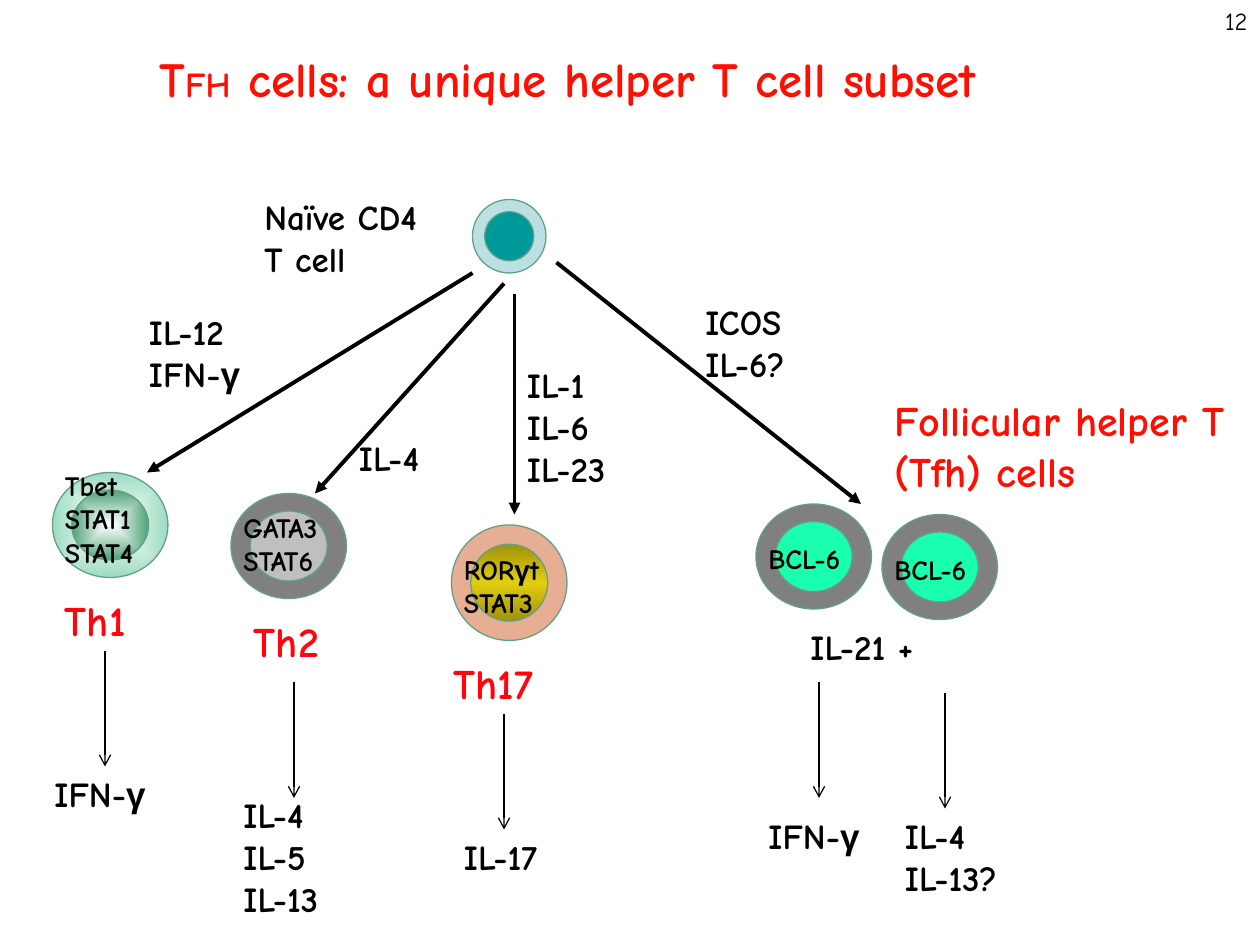
import pptx
import pptx.util
import pptx.dml.color
import pptx.enum.shapes
import pptx.enum.text
import pptx.oxml
import pptx.oxml.ns

Pt = pptx.util.Pt
FONT, GREEK = "Comic Neue", "Arial"
BLACK, RED, BRIGHT, EDGE = "000000", "FF0E02", "FF060F", "63A186"

TITLE = [("T", 28), ("FH", 20), (" cells: a unique helper T cell subset", 28)]

# A fill is a colour, or (stops, radial)
MINT = ([(0, "FFFFFF"), (100, "9CDCC1")], True)
GREEN = ([(0, "FFFFFF"), (100, "4DA376")], True)
GOLD = ([(0, "A1930B"), (50, "E1CD0F"), (100, "A1930B")], False)

# left, top, width, height, cell fill, nucleus fill
CELLS = [
    (30, 270, 66, 60, MINT, GREEN),
    (258, 300, 66, 66, "E6AE92", GOLD),
    (270, 114, 42, 42, "BBE0E3", "009999"),
    (132, 282, 66, 60, "808080", "BFBFBF"),
    (504, 294, 66, 60, "808080", "19FFAF"),
    (432, 288, 66, 60, "808080", "19FFAF"),
]

# x and y of the start, x and y of the end
PATHS = [
    (270, 156, 84, 270),
    (288, 162, 180, 282),
    (294, 168, 294, 294),
    (318, 150, 492, 288),
]

# x and y of the start of each arrow down to the secreted cytokines
DROPS = [(60, 372), (468, 390), (168, 390), (288, 408), (540, 396)]
DROP = 66

# left, top, width, lines, by size and colour
LABELS = {
    (24, BRIGHT): [
        (30, 336, 60, ["Th1"]),
        (138, 348, 60, ["Th2"]),
        (252, 372, 75, ["Th17"]),
    ],
    (24, RED): [(504, 222, 205, ["Follicular helper T (Tfh) cells"])],
    (20, BLACK): [
        (144, 108, 116, ["Naïve CD4", "T cell"]),
        (396, 168, 73, ["ICOS", "IL-6?"]),
        (78, 174, 77, ["IL-12", "IFN-γ"]),
        (198, 246, 61, ["IL-4"]),
        (294, 204, 73, ["IL-1", "IL-6", "IL-23"]),
        (132, 450, 73, ["IL-4", "IL-5", "IL-13"]),
        (510, 462, 85, ["IL-4", "IL-13?"]),
        (24, 438, 75, ["IFN-γ"]),
        (258, 474, 73, ["IL-17"]),
        (432, 462, 75, ["IFN-γ"]),
        (456, 354, 95, ["IL-21 +"]),
    ],
    (16, BLACK): [
        (504, 312, 63, ["BCL-6"]),
        (432, 306, 63, ["BCL-6"]),
        (30, 264, 70, ["Tbet", "STAT1", "STAT4"]),
        (258, 312, 70, ["RORγt", "STAT3"]),
        (132, 288, 71, ["GATA3", "STAT6"]),
    ],
}


def rgb(code):
    return pptx.dml.color.RGBColor.from_string(code)


def put_run(para, text, size, color, bold=True):
    """Add text, with Greek letters as runs in their own font."""
    head, gamma, tail = text.partition("γ")
    for part, face in ((head, FONT), (gamma, GREEK), (tail, FONT)):
        if part:
            run = para.add_run()
            run.text = part
            run.font.name = face
            run.font.size = Pt(size)
            run.font.bold = bold
            run.font.color.rgb = rgb(color)


def put_label(slide, left, top, width, lines, size, color, wrap=False):
    high = len(lines) * size * 1.2 + 7.2
    box = slide.shapes.add_textbox(Pt(left), Pt(top), Pt(width), Pt(high))
    frame = box.text_frame
    frame.word_wrap = wrap
    frame.auto_size = pptx.enum.text.MSO_AUTO_SIZE.SHAPE_TO_FIT_TEXT
    for i, line in enumerate(lines):
        para = frame.add_paragraph() if i else frame.paragraphs[0]
        put_run(para, line, size, color)


def blend(shape, stops, radial):
    """Fill a shape with a gradient, radial or from top to bottom."""
    marks = "".join(
        f'<a:gs pos="{pos * 1000}"><a:srgbClr val="{code}"/></a:gs>'
        for pos, code in stops)
    way = ('<a:path path="shape"><a:fillToRect l="50000" t="50000" '
           'r="50000" b="50000"/></a:path>' if radial
           else '<a:lin ang="5400000" scaled="1"/>')
    grad = pptx.oxml.parse_xml(
        f'<a:gradFill {pptx.oxml.ns.nsdecls("a")} rotWithShape="1">'
        f'<a:gsLst>{marks}</a:gsLst>{way}</a:gradFill>')
    shape.element.spPr.find(pptx.oxml.ns.qn("a:prstGeom")).addnext(grad)


def put_disc(group, left, top, width, height, fill):
    disc = group.shapes.add_shape(
        pptx.enum.shapes.MSO_SHAPE.OVAL,
        Pt(left), Pt(top), Pt(width), Pt(height))
    disc.shadow.inherit = False
    if isinstance(fill, str):
        disc.fill.solid()
        disc.fill.fore_color.rgb = rgb(fill)
    else:
        blend(disc, *fill)
    disc.line.color.rgb = rgb(EDGE)
    disc.line.width = Pt(0.75)


def put_cell(slide, left, top, width, height, fill, core):
    """Draw a cell with a centred nucleus two thirds its size."""
    group = slide.shapes.add_group_shape()
    put_disc(group, left, top, width, height, fill)
    put_disc(group, left + width / 6, top + height / 6,
             width * 2 / 3, height * 2 / 3, core)


def put_arrow(slide, x1, y1, x2, y2, width, head):
    line = slide.shapes.add_connector(
        pptx.enum.shapes.MSO_CONNECTOR.STRAIGHT,
        Pt(x1), Pt(y1), Pt(x2), Pt(y2))
    line.line.color.rgb = rgb(BLACK)
    line.line.width = Pt(width)
    space = pptx.oxml.ns.nsdecls("a")
    line.line._get_or_add_ln().append(
        pptx.oxml.parse_xml(f'<a:tailEnd {space} type="{head}"/>'))
    line.element.spPr.append(pptx.oxml.parse_xml(f"<a:effectLst {space}/>"))


def put_title(slide):
    title = slide.shapes.title
    title.left, title.top = Pt(84), Pt(24)
    title.width, title.height = Pt(568), Pt(41)
    frame = title.text_frame
    frame.auto_size = pptx.enum.text.MSO_AUTO_SIZE.NONE
    frame.vertical_anchor = pptx.enum.text.MSO_ANCHOR.TOP
    para = frame.paragraphs[0]
    para.alignment = pptx.enum.text.PP_ALIGN.LEFT
    for text, size in TITLE:
        put_run(para, text, size, RED)


def put_number(slide):
    box = slide.shapes.add_textbox(Pt(648), Pt(0), Pt(72), Pt(36))
    box.text_frame.word_wrap = True
    para = box.text_frame.paragraphs[0]
    para.alignment = pptx.enum.text.PP_ALIGN.RIGHT
    put_run(para, "12", 14, BLACK, bold=False)


def main():
    deck = pptx.Presentation()
    deck.slide_width, deck.slide_height = Pt(720), Pt(540)
    slide = deck.slides.add_slide(deck.slide_layouts[5])
    put_title(slide)
    put_number(slide)
    for cell in CELLS:
        put_cell(slide, *cell)
    for path in PATHS:
        put_arrow(slide, *path, 2.25, "triangle")
    for x, y in DROPS:
        put_arrow(slide, x, y, x, y + DROP, 0.75, "arrow")
    for (size, color), labels in LABELS.items():
        for label in labels:
            put_label(slide, *label, size, color, wrap=color == RED)
    deck.save("out.pptx")


if __name__ == "__main__":
    main()
